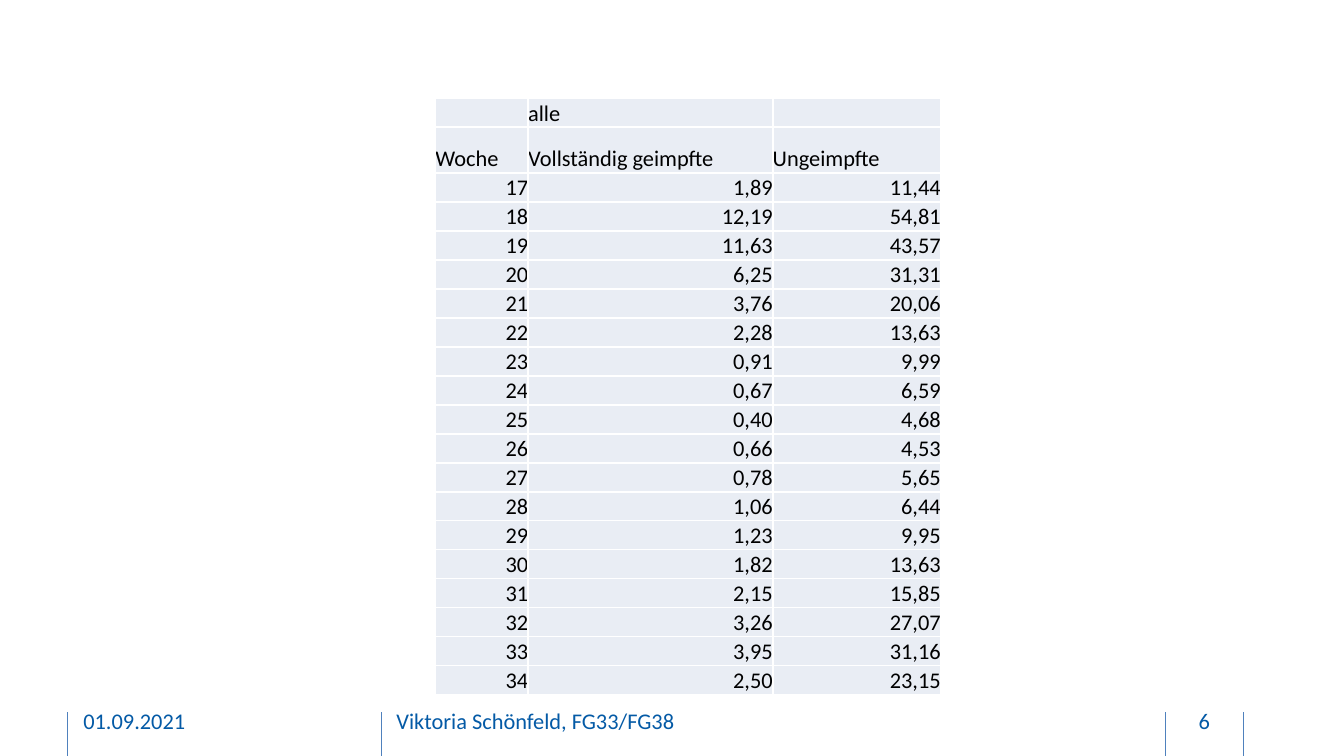
from lxml.etree import SubElement
from pptx import Presentation
from pptx.dml.color import RGBColor
from pptx.enum.shapes import MSO_CONNECTOR
from pptx.enum.text import MSO_ANCHOR, PP_ALIGN
from pptx.oxml.ns import qn
from pptx.util import Inches, Pt

WHITE = RGBColor(0xFF, 0xFF, 0xFF)
BLACK = RGBColor(0x00, 0x00, 0x00)
CELL_FILL = RGBColor(0xE9, 0xED, 0xF4)
FOOTER_BLUE = RGBColor(0x04, 0x5A, 0xA6)
RULE_BLUE = RGBColor(0x4F, 0x81, 0xBD)
FONT = "Calibri"
TEXT_SIZE = Pt(12)

HEADINGS = [
    ("", "alle", ""),
    ("Woche", "Vollständig geimpfte", "Ungeimpfte"),
]
FIRST_WEEK = 17
VACCINATED = ("1,89 12,19 11,63 6,25 3,76 2,28 0,91 0,67 0,40 "
              "0,66 0,78 1,06 1,23 1,82 2,15 3,26 3,95 2,50").split()
UNVACCINATED = ("11,44 54,81 43,57 31,31 20,06 13,63 9,99 6,59 4,68 "
                "4,53 5,65 6,44 9,95 13,63 15,85 27,07 31,16 23,15").split()
COLUMN_WIDTHS = (0.69, 1.82, 1.25)
HEADING_HEIGHT = Inches(0.34)


def write(paragraph, text, color, align):
    paragraph.alignment = align
    run = paragraph.add_run()
    run.text = text
    run.font.name = FONT
    run.font.size = TEXT_SIZE
    run.font.color.rgb = color


def add_borders(cell):
    properties = cell._tc.get_or_add_tcPr()
    for side in ("a:lnL", "a:lnR", "a:lnT", "a:lnB"):
        border = SubElement(properties, qn(side), w=str(Pt(1)))
        fill = SubElement(border, qn("a:solidFill"))
        SubElement(fill, qn("a:srgbClr"), val=str(WHITE))


def style_cell(cell, text, align):
    add_borders(cell)
    cell.fill.solid()
    cell.fill.fore_color.rgb = CELL_FILL
    cell.vertical_anchor = MSO_ANCHOR.BOTTOM
    cell.margin_left = cell.margin_right = 0
    cell.margin_top = cell.margin_bottom = 0
    paragraph = cell.text_frame.paragraphs[0]
    if text:
        write(paragraph, text, BLACK, align)
    else:  # keeps an empty cell from stretching its row
        SubElement(paragraph._p, qn("a:endParaRPr"), sz=str(int(TEXT_SIZE.pt * 100)))


def add_incidence_table(slide, left, top, width, height):
    weeks = [
        (str(week), vaccinated, unvaccinated)
        for week, (vaccinated, unvaccinated)
        in enumerate(zip(VACCINATED, UNVACCINATED), FIRST_WEEK)
    ]
    rows = HEADINGS + weeks
    row_height = (height - HEADING_HEIGHT) // (len(rows) - 1)
    table = slide.shapes.add_table(
        len(rows), len(COLUMN_WIDTHS), left, top, width, height).table
    for column, share in zip(table.columns, COLUMN_WIDTHS):
        column.width = int(width * share / sum(COLUMN_WIDTHS))
    for r, values in enumerate(rows):
        table.rows[r].height = HEADING_HEIGHT if r == 1 else row_height
        align = PP_ALIGN.LEFT if r < len(HEADINGS) else PP_ALIGN.RIGHT
        for c, value in enumerate(values):
            style_cell(table.cell(r, c), value, align)


def add_footer(slide, left, top, width, height):
    """Place rules and fields at shares of the footer's width."""
    for share in (0.867, 0.284, 0.05, 0.925):
        x = left + int(width * share)
        rule_top = top + Inches(0.09)
        rule = slide.shapes.add_connector(
            MSO_CONNECTOR.STRAIGHT, x, rule_top, x, rule_top + Inches(0.34))
        rule.line.color.rgb = RULE_BLUE
        rule.line.width = Pt(0.5)
        SubElement(rule._element.spPr, qn("a:effectLst"))

    fields = [
        (0.062, 0.203, "01.09.2021", PP_ALIGN.LEFT),
        (0.295, 0.317, "Viktoria Schönfeld, FG33/FG38", PP_ALIGN.LEFT),
        (0.869, 0.054, "6", PP_ALIGN.CENTER),
    ]
    for start, share, text, align in fields:
        field = slide.shapes.add_textbox(
            left + int(width * start), top, int(width * share), height)
        frame = field.text_frame
        frame.word_wrap = True
        frame.vertical_anchor = MSO_ANCHOR.MIDDLE
        frame.margin_left = frame.margin_right = 0
        write(frame.paragraphs[0], text, FOOTER_BLUE, align)


def main():
    presentation = Presentation()
    presentation.slide_width = Inches(10)
    presentation.slide_height = presentation.slide_width * 9 // 16
    slide = presentation.slides.add_slide(presentation.slide_layouts[6])
    add_incidence_table(slide, Inches(3.24), Inches(0.73),
                        Inches(sum(COLUMN_WIDTHS)), Inches(4.44))
    add_footer(slide, 0, Inches(5.21), presentation.slide_width, Inches(0.3))
    presentation.save("out.pptx")


if __name__ == "__main__":
    main()
